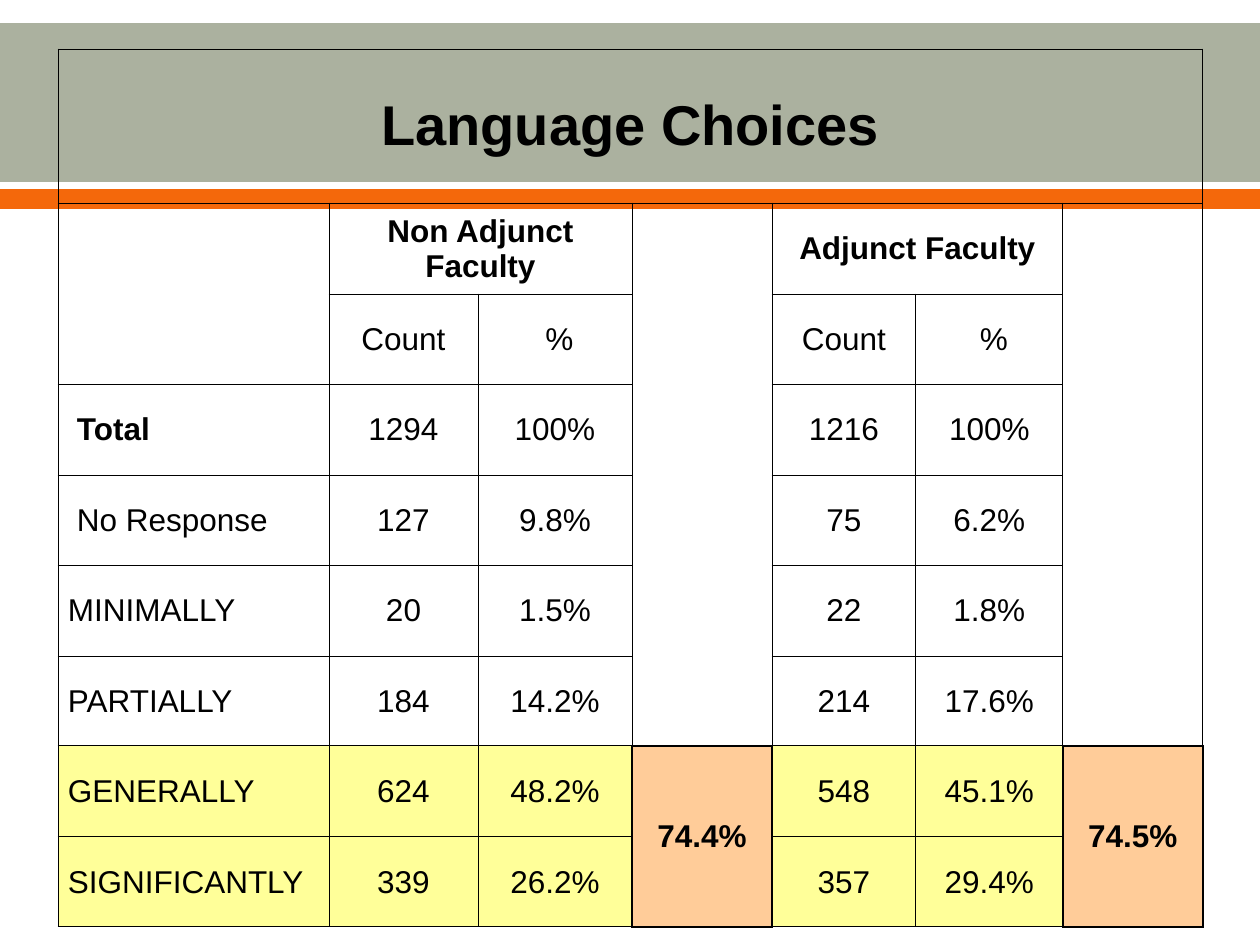
from lxml import etree
from pptx import Presentation, util as u
from pptx.dml.color import RGBColor
from pptx.enum import shapes, text
from pptx.oxml.ns import qn

PX = u.Inches(1) / 126
COLORS = {"ink": "000000", "sage": "ABB19F", "orange": "F4680B",
          "yellow": "FFFF99", "peach": "FFCC99"}
COLUMNS = [271, 149, 154, 140, 144, 147, 140]
ROWS = [154] + [91, 90] * 4
GAP_COLUMNS = (3, 6)
FIRST_SUM_ROW = 7
CHOICES = [
    ["Language Choices"],
    ["", "Non Adjunct Faculty", "", "", "Adjunct Faculty"],
    ["", "Count", "%", "", "Count", "%"],
    ["Total", "1294", "100%", "", "1216", "100%"],
    ["No Response", "127", "9.8%", "", "75", "6.2%"],
    ["MINIMALLY", "20", "1.5%", "", "22", "1.8%"],
    ["PARTIALLY", "184", "14.2%", "", "214", "17.6%"],
    ["GENERALLY", "624", "48.2%", "74.4%", "548", "45.1%", "74.5%"],
    ["SIGNIFICANTLY", "339", "26.2%", "", "357", "29.4%"],
]
MERGES = [(0, 0, 0, 6), (1, 1, 1, 2), (1, 4, 1, 5), (7, 3, 8, 3), (7, 6, 8, 6)]
SIDES = {"a:lnL": (0, -1), "a:lnR": (0, 1), "a:lnT": (-1, 0), "a:lnB": (1, 0)}


def px(length):
    return round(length * PX)


def is_sum(row, column):
    return column in GAP_COLUMNS and FIRST_SUM_ROW <= row < len(ROWS)


def is_open(row, column):
    if column == 0:
        return row in (1, 2)
    return column in GAP_COLUMNS and 1 <= row < FIRST_SUM_ROW


def border_width(row, column, step):
    here, beyond = (row, column), (row + step[0], column + step[1])
    if is_open(*here) and is_open(*beyond):
        return 0
    return 1 if is_sum(*here) or is_sum(*beyond) else 0.5


class SlideBuilder:
    """Holds the style and the current slide."""

    font = "Arial"

    def __init__(self, slide):
        self.slide = slide

    def color(self, name):
        return RGBColor.from_string(COLORS[name])

    def band(self, top, height, fill):
        band = self.slide.shapes.add_shape(
            shapes.MSO_SHAPE.RECTANGLE, 0, px(top), px(1260), px(height))
        band.shadow.inherit = False
        band.fill.solid()
        band.fill.fore_color.rgb = self.color(fill)
        band.line.fill.background()

    def borders(self, cell, row, column):
        properties = cell._tc.get_or_add_tcPr()
        for side, step in SIDES.items():
            width = border_width(row, column, step)
            line = etree.SubElement(properties, qn(side), w=str(u.Pt(width)))
            if width:
                fill = etree.SubElement(line, qn("a:solidFill"))
                etree.SubElement(fill, qn("a:srgbClr"), val=COLORS["ink"])
            else:
                etree.SubElement(line, qn("a:noFill"))

    def fill(self, cell, row, column):
        if row < FIRST_SUM_ROW:
            cell.fill.background()
        else:
            cell.fill.solid()
            cell.fill.fore_color.rgb = self.color(
                "peach" if is_sum(row, column) else "yellow")

    def label(self, cell, words, size, bold, centered, indent):
        cell.text = words
        cell.vertical_anchor = text.MSO_ANCHOR.MIDDLE
        cell.margin_left = px(1 + indent)
        cell.margin_top = cell.margin_right = px(1)
        cell.margin_bottom = 0
        paragraph = cell.text_frame.paragraphs[0]
        paragraph.alignment = text.PP_ALIGN.CENTER if centered else text.PP_ALIGN.LEFT
        paragraph.font.name = self.font
        paragraph.font.size = u.Pt(size)
        paragraph.font.bold = bold
        paragraph.font.color.rgb = self.color("ink")

    def table(self, left, top):
        table = self.slide.shapes.add_table(
            len(ROWS), len(COLUMNS), px(left), px(top),
            px(sum(COLUMNS)), px(sum(ROWS))).table
        table.first_row = table.horz_banding = False
        for column, width in zip(table.columns, COLUMNS):
            column.width = px(width)
        for row, height in zip(table.rows, ROWS):
            row.height = px(height)
        for first_row, first_column, last_row, last_column in MERGES:
            table.cell(first_row, first_column).merge(table.cell(last_row, last_column))
        for row in range(len(ROWS)):
            for column in range(len(COLUMNS)):
                cell = table.cell(row, column)
                self.borders(cell, row, column)
                self.fill(cell, row, column)
        for row, entries in enumerate(CHOICES):
            for column, words in enumerate(entries):
                if not words:
                    continue
                bold = row < 2 or words == "Total" or is_sum(row, column)
                centered = row == 0 or column > 0
                indent = 9 if words == "%" else 0
                if not centered:
                    indent = 18 if row < 5 else 9
                self.label(table.cell(row, column), words,
                           32 if row == 0 else 18, bold, centered, indent)


def main():
    deck = Presentation()
    deck.slide_width, deck.slide_height = u.Inches(10), u.Inches(7.5)
    builder = SlideBuilder(deck.slides.add_slide(deck.slide_layouts[6]))
    builder.band(23, 159, "sage")
    builder.band(189, 20, "orange")
    builder.table(58, 49)
    deck.save("out.pptx")


if __name__ == "__main__":
    main()
